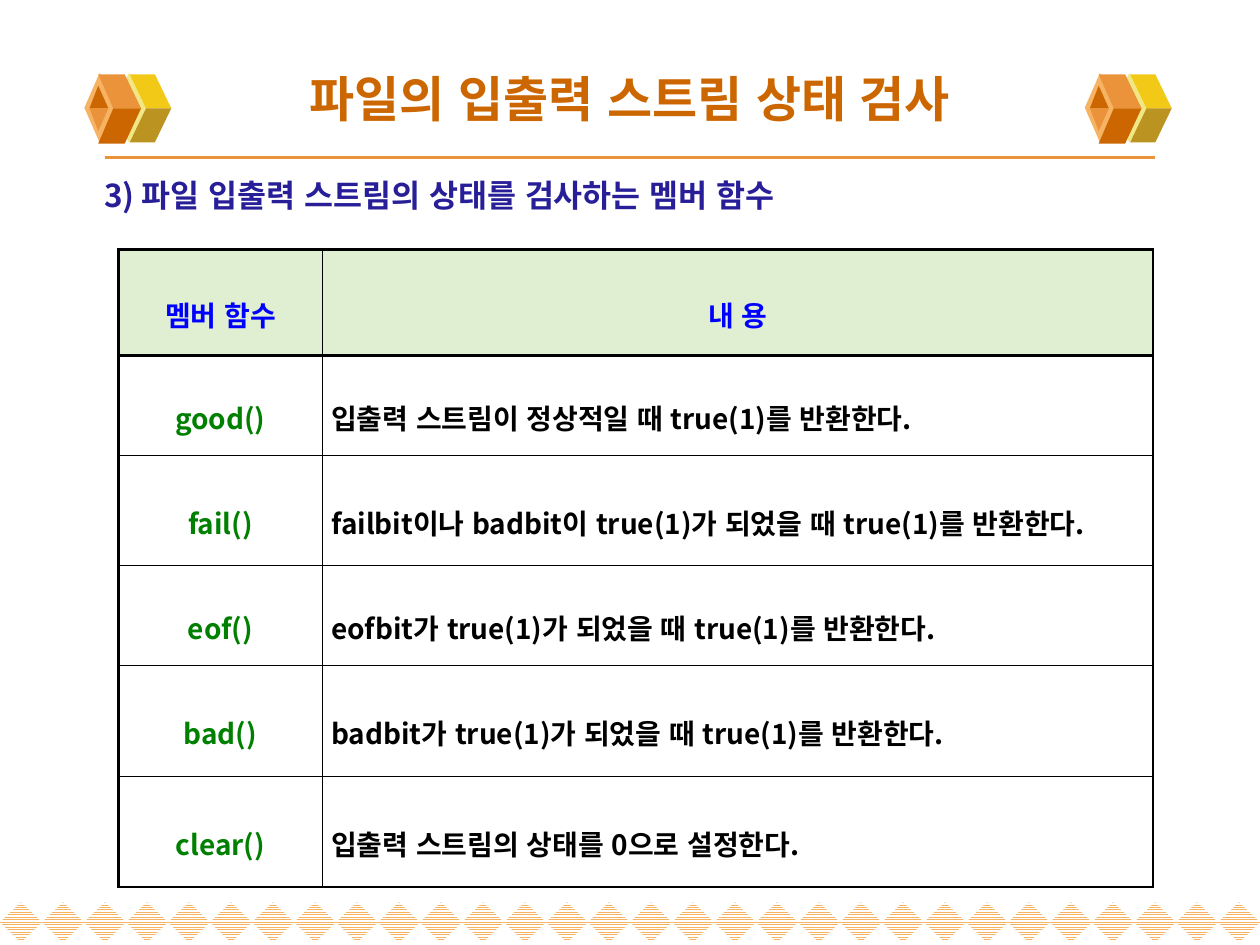
from dataclasses import dataclass

from lxml.etree import SubElement
from pptx import Presentation
from pptx.dml.color import RGBColor
from pptx.enum.dml import MSO_PATTERN
from pptx.enum.lang import MSO_LANGUAGE_ID as Language
from pptx.enum.shapes import MSO_CONNECTOR, MSO_SHAPE
from pptx.enum.text import MSO_ANCHOR, MSO_AUTO_SIZE, PP_ALIGN
from pptx.oxml.ns import qn
from pptx.util import Inches, Pt


@dataclass(frozen=True)
class Theme:
    font: str = "Noto Sans CJK KR"
    title_size: float = 28
    heading_size: float = 18
    table_size: float = 16
    title: str = "CC6600"
    heading: str = "271E98"
    header_text: str = "0000FF"
    header_fill: str = "E0EED1"
    function: str = "008000"
    ink: str = "000000"
    paper: str = "FFFFFF"
    rule: str = "EB933B"
    diamond: str = "F5B363"
    cube_back: str = "F1E785"
    cube_yellow: str = "F3C917"
    cube_olive: str = "BB9321"
    cube_front: str = "F5B363"
    cube_orange: str = "EB933B"
    cube_brown: str = "CC6600"
    thin: float = 0.28
    thick: float = 1.7
    header_line: float = 1.98


THEME = Theme()

ROWS = [
    ("멤버 함수", "내 용"),
    ("good()", "입출력 스트림이 정상적일 때 true(1)를 반환한다."),
    ("fail()", "failbit이나 badbit이 true(1)가 되었을 때 true(1)를 반환한다."),
    ("eof()", "eofbit가 true(1)가 되었을 때 true(1)를 반환한다."),
    ("bad()", "badbit가 true(1)가 되었을 때 true(1)를 반환한다."),
    ("clear()", "입출력 스트림의 상태를 0으로 설정한다."),
]
COLUMN_WIDTHS = (1.62, 6.59)
ROW_HEIGHTS = (0.84, 0.79, 0.88, 0.79, 0.88, 0.88)


def color(value):
    return RGBColor.from_string(value)


def write(frame, text, size, ink, align):
    frame.text = text
    para = frame.paragraphs[0]
    para.alignment = align
    span = para.runs[0]
    span.font.size = Pt(size)
    span.font.bold = True
    span.font.color.rgb = color(ink)
    span.font.name = THEME.font
    span.font.language_id = Language.KOREAN
    SubElement(span.font._element, qn("a:ea"), typeface=THEME.font)
    return para


def paint(shape, fill):
    shape.shadow.inherit = False
    shape.fill.solid()
    shape.fill.fore_color.rgb = color(fill)
    shape.line.fill.background()


def add_diamond_band(page, left, top, width, height, count=30):
    band = page.shapes.add_group_shape()
    step = width / count
    for index in range(count):
        diamond = band.shapes.add_shape(
            MSO_SHAPE.DIAMOND, Inches(left + index * step), Inches(top),
            Inches(step), Inches(height))
        diamond.shadow.inherit = False
        diamond.fill.patterned()
        diamond.fill.pattern = MSO_PATTERN.NARROW_HORIZONTAL
        diamond.fill.fore_color.rgb = color(THEME.diamond)
        diamond.fill.back_color.rgb = color(THEME.paper)
        diamond.line.fill.background()


def add_cube(page, left, top):
    cube = page.shapes.add_group_shape()

    def add_diamond(x, width, fill):
        diamond = cube.shapes.add_shape(
            MSO_SHAPE.DIAMOND, Inches(left + x), Inches(top),
            Inches(width), Inches(0.55))
        paint(diamond, fill)

    def add_face(points, fill):
        corners = [(Inches(left + x), Inches(top + y)) for x, y in points]
        builder = cube.shapes.build_freeform(*corners[0])
        builder.add_line_segments(corners[1:], close=True)
        paint(builder.convert_to_shape(), fill)

    add_diamond(0.19, 0.33, THEME.cube_back)
    add_face([(0.49, 0.28), (0.69, 0.28), (0.56, 0.01), (0.36, 0.01)], THEME.cube_yellow)
    add_face([(0.49, 0.28), (0.69, 0.28), (0.56, 0.55), (0.36, 0.55)], THEME.cube_olive)
    add_diamond(0, 0.24, THEME.cube_front)
    add_face([(0.23, 0.28), (0.45, 0.28), (0.32, 0.01), (0.11, 0.01)], THEME.cube_orange)
    add_face([(0.23, 0.28), (0.45, 0.28), (0.32, 0.56), (0.11, 0.56)], THEME.cube_brown)
    add_face([(0.11, 0.1), (0.04, 0.28), (0.19, 0.28)], THEME.cube_brown)
    add_face([(0.11, 0.46), (0.04, 0.28), (0.19, 0.28)], THEME.cube_orange)


def add_rule(page, left, top, width):
    rule = page.shapes.add_connector(
        MSO_CONNECTOR.STRAIGHT, Inches(left), Inches(top),
        Inches(left + width), Inches(top))
    rule.line.color.rgb = color(THEME.rule)
    rule.line.width = Pt(2.25)
    SubElement(rule._element.spPr, qn("a:effectLst"))


def place_title(page, left, top, width, height):
    title = page.shapes.title
    title.left, title.top = Inches(left), Inches(top)
    title.width, title.height = Inches(width), Inches(height)
    frame = title.text_frame
    write(frame, "파일의 입출력 스트림 상태 검사", THEME.title_size, THEME.title, PP_ALIGN.CENTER)
    frame.vertical_anchor = MSO_ANCHOR.MIDDLE
    frame.auto_size = MSO_AUTO_SIZE.NONE


def add_heading(page, left, top, width, height):
    box = page.shapes.add_textbox(Inches(left), Inches(top), Inches(width), Inches(height))
    frame = box.text_frame
    frame.word_wrap = True
    para = write(frame, "3) 파일 입출력 스트림의 상태를 검사하는 멤버 함수",
                 THEME.heading_size, THEME.heading, PP_ALIGN.LEFT)
    properties = para._p.get_or_add_pPr()
    properties.set("marL", str(Inches(0.88)))
    properties.set("indent", str(Inches(-0.38)))


def set_borders(cell, **widths):
    properties = cell._tc.get_or_add_tcPr()
    for side in ("L", "R", "T", "B"):
        line = SubElement(properties, qn(f"a:ln{side}"), w=str(Pt(widths[side])))
        fill = SubElement(line, qn("a:solidFill"))
        SubElement(fill, qn("a:srgbClr"), val=THEME.ink)


def format_cell(cell, text, row, column):
    header, last = row == 0, row == len(ROWS) - 1
    name = column == 0
    set_borders(
        cell,
        L=THEME.thick if name else THEME.thin,
        R=THEME.thin if name else THEME.thick,
        T=THEME.thick if header else THEME.header_line if row == 1 else THEME.thin,
        B=THEME.header_line if header else THEME.thick if last else THEME.thin)
    if header:
        cell.fill.solid()
        cell.fill.fore_color.rgb = color(THEME.header_fill)
    else:
        cell.fill.background()
    cell.vertical_anchor = MSO_ANCHOR.MIDDLE
    cell.margin_left = cell.margin_right = Inches(0.07)
    cell.margin_top = cell.margin_bottom = Inches(0.02)
    ink = THEME.header_text if header else THEME.function if name else THEME.ink
    align = PP_ALIGN.CENTER if header or name else PP_ALIGN.JUSTIFY
    write(cell.text_frame, text, THEME.table_size, ink, align).line_spacing = 1.6


def add_function_table(page, left, top, width, height):
    table = page.shapes.add_table(
        len(ROWS), len(COLUMN_WIDTHS), Inches(left), Inches(top),
        Inches(width), Inches(height)).table
    table.horz_banding = False
    for column, size in zip(table.columns, COLUMN_WIDTHS):
        column.width = Inches(size)
    for row, size in zip(table.rows, ROW_HEIGHTS):
        row.height = Inches(size)
    for row, texts in enumerate(ROWS):
        for column, text in enumerate(texts):
            format_cell(table.cell(row, column), text, row, column)


def main():
    deck = Presentation()
    deck.slide_width, deck.slide_height = Inches(10), Inches(7.5)
    page = deck.slides.add_slide(deck.slide_layouts[5])
    add_diamond_band(page, 0, 7.16, 10, 0.32)
    add_rule(page, 0.83, 1.25, 8.34)
    for left in (0.67, 8.61):
        add_cube(page, left, 0.58)
    place_title(page, 0.5, 0.3, 9, 0.95)
    add_heading(page, 0.23, 1.35, 8.83, 0.35)
    add_function_table(page, 0.94, 1.98, sum(COLUMN_WIDTHS), sum(ROW_HEIGHTS))
    deck.save("out.pptx")


if __name__ == "__main__":
    main()
